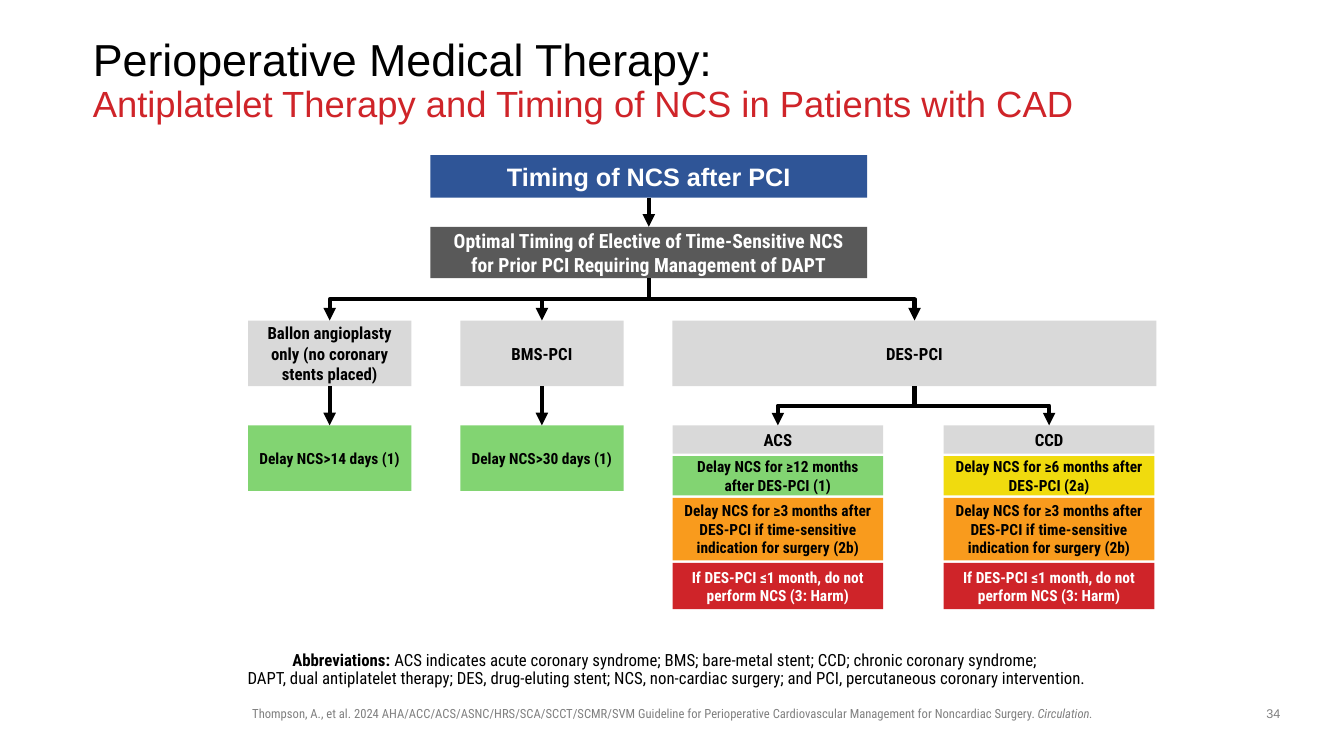
from pptx import Presentation
from pptx.dml.color import RGBColor
from pptx.enum.shapes import MSO_CONNECTOR as LINE, MSO_SHAPE
from pptx.enum.text import MSO_ANCHOR as ANCHOR, MSO_AUTO_SIZE, PP_ALIGN as ALIGN
from pptx.oxml.ns import qn
from pptx.util import Inches, Pt
from lxml.etree import SubElement

# Content
COLORS = {"black": "000000", "white": "FFFFFF", "accent": "CF2429", "blue": "2F5597",
          "dark": "595959", "light": "D9D9D9", "green": "82D472", "yellow": "F0DB0E",
          "orange": "F99B1D", "red": "CF2429", "muted": "808080"}
SANS, CONDENSED = "Arial", "Roboto Condensed"

HEADING = "Perioperative Medical Therapy: "
SUBHEADING = "Antiplatelet Therapy and Timing of NCS in Patients with CAD"
START = "Timing of NCS after PCI"
QUESTION = ("Optimal Timing of Elective of Time-Sensitive NCS "
            "for Prior PCI Requiring Management of DAPT")
SIMPLE_BRANCHES = [
    ("Ballon angioplasty only (no coronary stents placed)", "Delay NCS>14 days (1)"),
    ("BMS-PCI", "Delay NCS>30 days (1)"),
]
STENT_BRANCH = "DES-PCI"
LATER = ("orange", "Delay NCS for ≥3 months after DES-PCI if time-sensitive "
                   "indication for surgery (2b)")
HARM = ("red", "If DES-PCI ≤1 month, do not perform NCS (3: Harm)")
STENT_GROUPS = [
    ("ACS", [("green", "Delay NCS for ≥12 months after DES-PCI (1)"), LATER, HARM]),
    ("CCD", [("yellow", "Delay NCS for ≥6 months after DES-PCI (2a)"), LATER, HARM]),
]
ABBREVIATIONS = [
    "ACS indicates acute coronary syndrome; BMS; bare-metal stent; "
    "CCD; chronic coronary syndrome; ",
    "DAPT, dual antiplatelet therapy; DES, drug-eluting stent; NCS, non-cardiac surgery; "
    "and PCI, percutaneous coronary intervention.",
]
CITATION = ("Thompson, A., et al. 2024 AHA/ACC/ACS/ASNC/HRS/SCA/SCCT/SCMR/SVM Guideline for "
            "Perioperative Cardiovascular Management for Noncardiac Surgery. ")
JOURNAL = "Circulation."
PAGE = "34"

# Grid, in inches
TOP_LEFT, TOP_WIDTH = 4.27, 4.33
BRANCH_LEFT, BRANCH_STEP, BRANCH_WIDTH, BRANCH_HEIGHT = 2.46, 2.105, 1.62, 0.65
BRANCH_TOP, RESULT_TOP = 3.18, 4.22
STENT_LEFT, STENT_WIDTH = 6.67, 4.8
GROUP_STEP, GROUP_WIDTH, GROUP_GAP = 2.69, 2.09, 0.025
GROUP_HEIGHTS = [0.28, 0.39, 0.62, 0.46]

deck = Presentation()
deck.slide_width, deck.slide_height = Inches(13.33), Inches(7.5)
slide = deck.slides.add_slide(deck.slide_layouts[1])
shapes = slide.shapes


def rgb(name):
    return RGBColor.from_string(COLORS[name])


def style(font, size, color, face=CONDENSED, bold=False):
    font.name, font.size, font.bold = face, Pt(size), bold
    font.color.rgb = rgb(color)


def place(item, left, top, width, height):
    item.left, item.top = Inches(left), Inches(top)
    item.width, item.height = Inches(width), Inches(height)


def frame_of(item, anchor, insets=(0.1, 0.05, 0.1, 0.05)):
    frame = item.text_frame
    frame.word_wrap, frame.auto_size = True, MSO_AUTO_SIZE.NONE
    frame.vertical_anchor = anchor
    (frame.margin_left, frame.margin_top,
     frame.margin_right, frame.margin_bottom) = map(Inches, insets)
    return frame.paragraphs[0]


def box(text, left, top, width, height, fill, size, face=CONDENSED):
    item = shapes.add_shape(MSO_SHAPE.RECTANGLE, *map(Inches, (left, top, width, height)))
    item.shadow.inherit = False
    item.fill.solid()
    item.fill.fore_color.rgb = rgb(fill)
    item.line.fill.background()
    paragraph = frame_of(item, ANCHOR.MIDDLE)
    paragraph.text, paragraph.alignment = text, ALIGN.CENTER
    ink = "white" if fill in ("blue", "dark", "red") else "black"
    style(paragraph.font, size, ink, face, True)
    return item


def small_print(left, width, face, *texts):
    item = shapes.add_textbox(*map(Inches, (left, 6.95, width, 0.25)))
    paragraph = frame_of(item, ANCHOR.TOP)
    paragraph.alignment = ALIGN.CENTER
    style(paragraph.font, 9, "muted", face)
    for text in texts:
        paragraph.add_run().text = text
    return paragraph


def arrow(source, target):
    x1, y1 = source.left + source.width // 2, source.top + source.height
    x2, y2 = target.left + target.width // 2, target.top
    run, drop = abs(x2 - x1), y2 - y1
    straight = run < Inches(0.02)
    link = shapes.add_connector(LINE.STRAIGHT if straight else LINE.ELBOW, x1, y1, x2, y2)
    if not straight:
        # A vertical elbow is a horizontal one turned about its centre
        link.left, link.top = (x1 + x2 - drop) // 2, (y1 + y2 - run) // 2
        link.width, link.height = drop, run
        frame = link.element.spPr.find(qn("a:xfrm"))
        for flip in ("flipH", "flipV"):
            frame.attrib.pop(flip, None)
        frame.set("rot", str((90 if x2 < x1 else 270) * 60000))
        if x2 > x1:
            frame.set("flipH", "1")
    link.line.color.rgb, link.line.width = rgb("black"), Pt(3)
    SubElement(link.line._get_or_add_ln(), qn("a:tailEnd"), type="triangle")
    SubElement(link.element.spPr, qn("a:effectLst"))


# Title
title = shapes.title
place(title, 0.92, 0.4, 11.5, 0.82)
heading = frame_of(title, ANCHOR.MIDDLE, (0, 0, 0, 0))
heading.alignment, heading.line_spacing = ALIGN.LEFT, 0.9
for text, size, color in [(HEADING, 32, "black"), (SUBHEADING, 26, "accent")]:
    if heading.runs:
        heading.add_line_break()
    part = heading.add_run()
    part.text = text
    style(part.font, size, color, SANS)

# Flowchart boxes and arrows
start = box(START, TOP_LEFT, 1.54, TOP_WIDTH, 0.42, "blue", 18, SANS)
question = box(QUESTION, TOP_LEFT, 2.25, TOP_WIDTH, 0.51, "dark", 14)
arrow(start, question)

for column, (branch_text, result_text) in enumerate(SIMPLE_BRANCHES):
    left = BRANCH_LEFT + column * BRANCH_STEP
    branch = box(branch_text, left, BRANCH_TOP, BRANCH_WIDTH, BRANCH_HEIGHT, "light", 12)
    result = box(result_text, left, RESULT_TOP, BRANCH_WIDTH, BRANCH_HEIGHT, "green", 11)
    arrow(question, branch)
    arrow(branch, result)

stent = box(STENT_BRANCH, STENT_LEFT, BRANCH_TOP, STENT_WIDTH, BRANCH_HEIGHT, "light", 12)
arrow(question, stent)
for column, (group_name, advice) in enumerate(STENT_GROUPS):
    left, top = STENT_LEFT + column * GROUP_STEP, RESULT_TOP
    rows = [("light", group_name)] + advice
    for row, ((fill, text), height) in enumerate(zip(rows, GROUP_HEIGHTS)):
        cell = box(text, left, top, GROUP_WIDTH, height, fill, 11 if row else 12)
        if row == 0:
            arrow(stent, cell)
        top += height + GROUP_GAP

# Abbreviations
body = slide.placeholders[1]
place(body, 1.88, 6.42, 9.57, 0.46)
legend = frame_of(body, ANCHOR.BOTTOM, (0, 0.05, 0.1, 0.05))
properties = legend._p.get_or_add_pPr()
properties.set("marL", "0")
properties.set("indent", "0")
SubElement(properties, qn("a:buNone"))
legend.alignment, legend.line_spacing, legend.space_before = ALIGN.CENTER, 0.9, Pt(0)
style(legend.font, 12, "black")
label = legend.add_run()
label.text, label.font.bold = "Abbreviations: ", True
for number, text in enumerate(ABBREVIATIONS):
    if number:
        legend.add_line_break()
    legend.add_run().text = text

# Citation and page number
citation = small_print(2.36, 8.62, CONDENSED, CITATION, JOURNAL)
citation.runs[-1].font.italic = True
small_print(12.42, 0.42, SANS, PAGE)

deck.save("out.pptx")
